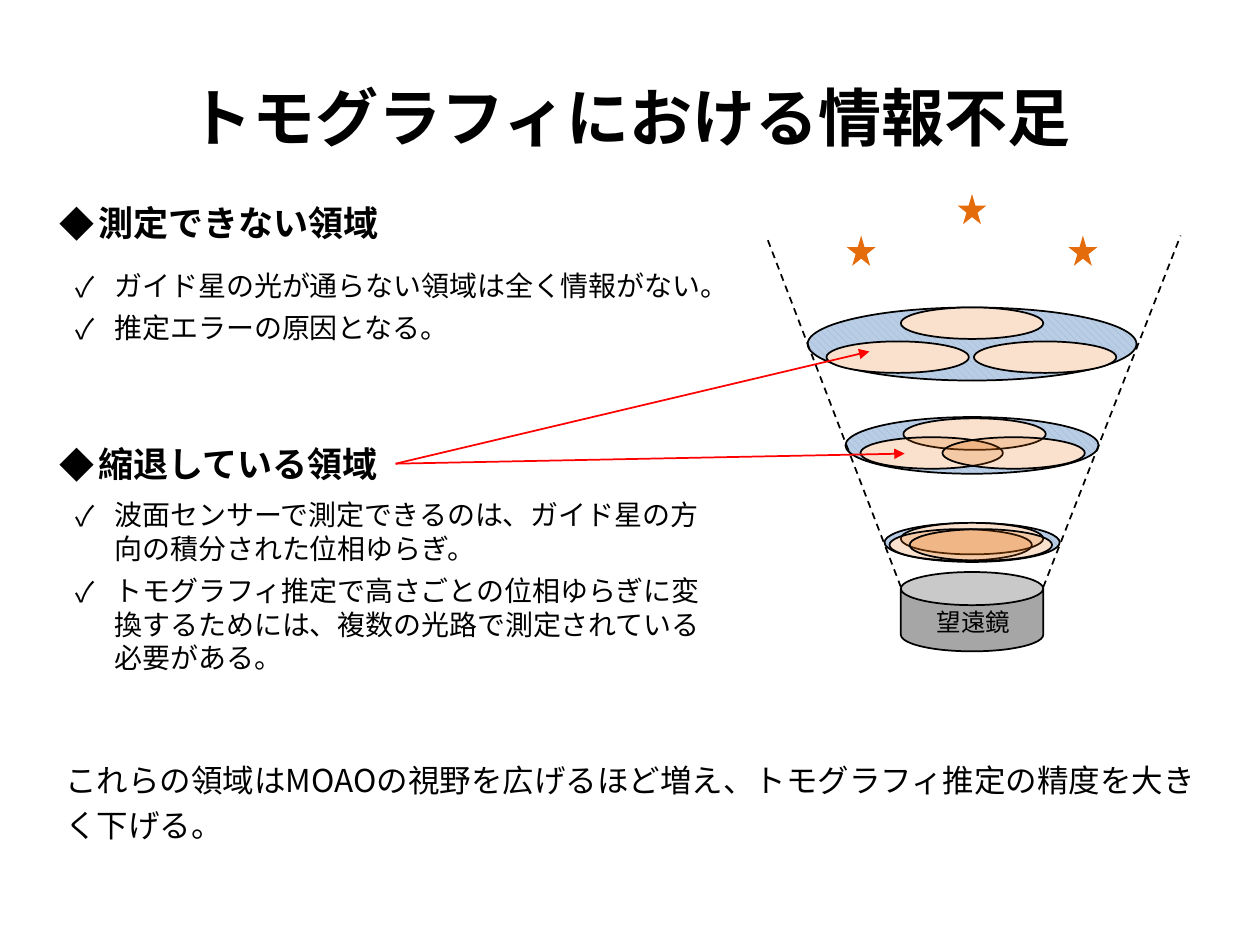
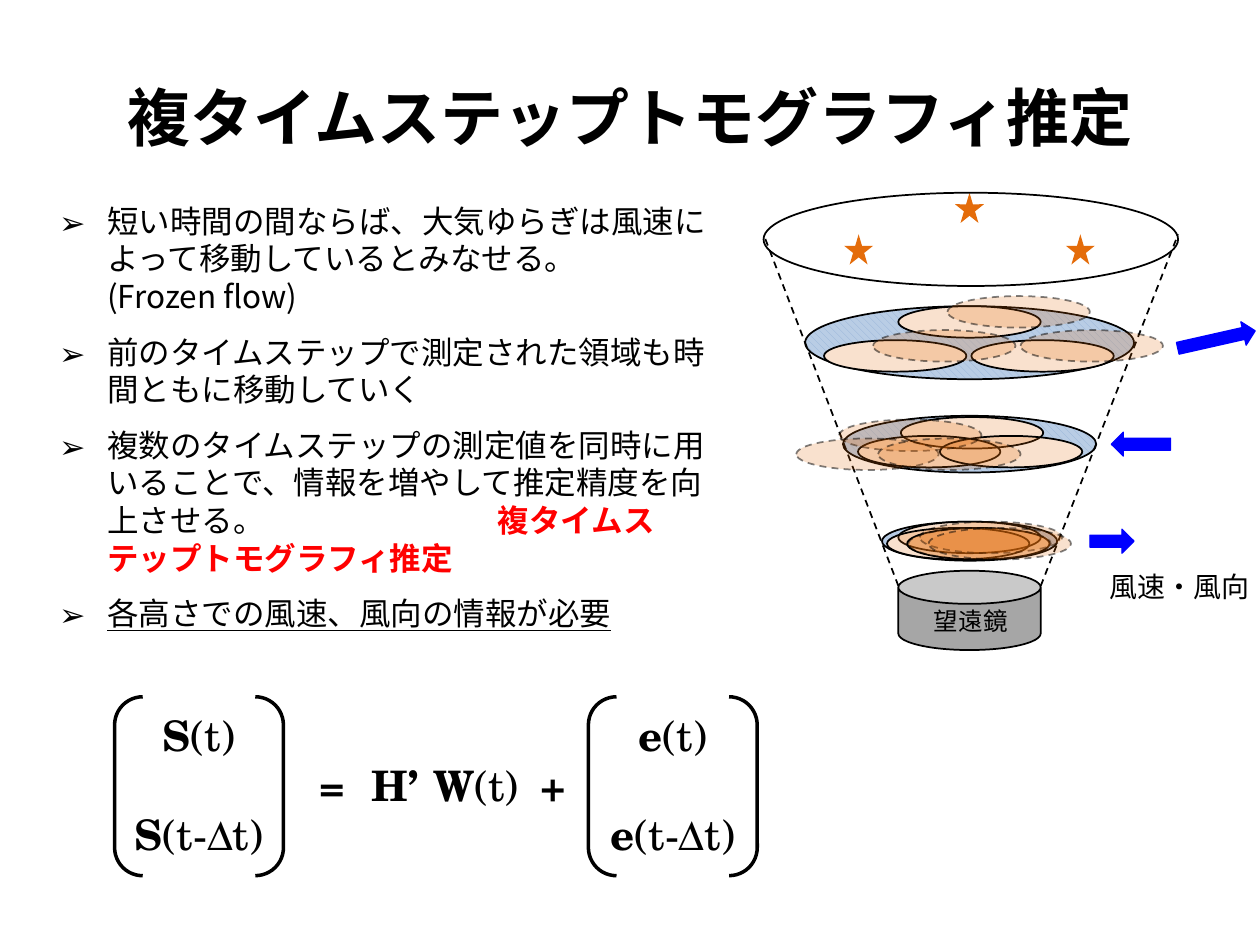
from lxml.etree import SubElement as Sub
from pptx import Presentation
from pptx.dml.color import RGBColor as RGB
from pptx.enum.dml import MSO_LINE as Dash, MSO_PATTERN as Hatch
from pptx.enum.shapes import MSO_CONNECTOR as Link, MSO_SHAPE as Kind
from pptx.enum.text import MSO_ANCHOR as Anchor, MSO_AUTO_SIZE as Fit, PP_ALIGN as Align
from pptx.oxml.ns import qn
from pptx.util import Pt

PX = 9144
BLACK = RGB(0x00, 0x00, 0x00)
WHITE = RGB(0xFF, 0xFF, 0xFF)
RED = RGB(0xFF, 0x00, 0x00)
BLUE = RGB(0x00, 0x00, 0xFF)
ORANGE = RGB(0xE4, 0x6C, 0x0A)
GRAY = RGB(0xA6, 0xA6, 0xA6)
SKY = RGB(0x95, 0xB3, 0xD7)
PALE = RGB(0xB9, 0xCD, 0xE5)
SANS, LATIN, SERIF = "Noto Sans CJK JP", "Calibri", "TeX Gyre Schola"

PATCH = (113, 25)
# Each layer: box, corners of its light patches, drift by the wind, arrow box, arrow angle
LAYERS = [
    ((94, 261, 139, 31), [(107, 261), (98, 266), (114, 266)], (17, 0), (259, 267, 35, 19), 0),
    ((63, 177, 201, 45), [(109, 178), (75, 193), (140, 193)], (-49, 2), (276, 190, 47, 19), 180),
    ((33, 90, 261, 58), [(48, 117), (165, 117), (107, 90)], (39, -8), (328, 107, 63, 19), 347.3),
]
STARS = [(152, 0), (64, 33), (240, 33)]


def emu(*sizes):
    """Turn px lengths into EMU."""
    return [size * PX for size in sizes]


def shift(box, x, y):
    """Move a box or point by x and y."""
    return (box[0] + x, box[1] + y, *box[2:])


def write(frame, paras, size=16, font=SANS, color=BLACK, bold=False, align=Align.LEFT,
          anchor=Anchor.TOP, wrap=True, mark=None, indent=0, before=0, lines=1.0, tab=None):
    """Fill a text frame; a paragraph is a string or a list of (text, changes)."""
    frame.auto_size, frame.word_wrap, frame.vertical_anchor = Fit.NONE, wrap, anchor
    for i, runs in enumerate(paras):
        para = frame.add_paragraph() if i else frame.paragraphs[0]
        para.alignment, para.line_spacing = align, lines
        para.space_before = Pt(before)
        props = para._p.get_or_add_pPr()
        props.set("marL", str(indent * PX))
        props.set("indent", str(-indent * PX))
        if mark:
            Sub(props, qn("a:buFont"), typeface=SANS)
            Sub(props, qn("a:buChar"), char=mark)
        if tab:
            tabs = Sub(props, qn("a:tabLst"))
            Sub(tabs, qn("a:tab"), pos=str(tab * PX), algn="l")
        for text, look in [(runs, {})] if isinstance(runs, str) else runs:
            run = para.add_run()
            run.text = text
            style = run.font
            style.name, style.size = font, Pt(size)
            style.bold = look.get("bold", bold)
            style.underline = look.get("under", False)
            style.color.rgb = look.get("color", color)
            east = Sub(run._r.rPr, qn("a:ea"), typeface=font)
            run._r.rPr.find(qn("a:latin")).addnext(east)


def label(slide, box, paras, **look):
    """Add a text box."""
    part = slide.shapes.add_textbox(*emu(*box))
    write(part.text_frame, paras, **look)


def place(part, box, paras, **look):
    """Move a placeholder to a box and fill it."""
    part.left, part.top, part.width, part.height = emu(*box)
    write(part.text_frame, paras, **look)
    return part


def head(slide, text):
    """Set the slide title."""
    place(slide.shapes.title, (50, 30, 900, 125), [text], size=36, bold=True,
          align=Align.CENTER, anchor=Anchor.MIDDLE)


def fade(fill, share):
    """Make a solid fill element partly clear."""
    Sub(fill.find(qn("a:srgbClr")), qn("a:alpha"), val=str(share * 1000))


def draw(slide, kind, box, fill=None, line=None, width=1, clear=None, dash=False):
    """Add a preset shape without shadow."""
    part = slide.shapes.add_shape(kind, *emu(*box))
    part.shadow.inherit = False
    props = part._element.spPr
    if fill is None:
        part.fill.background()
    else:
        part.fill.solid()
        part.fill.fore_color.rgb = fill
        if clear:
            fade(props.find(qn("a:solidFill")), clear)
    if line is None:
        part.line.fill.background()
    else:
        part.line.color.rgb = line
        part.line.width = Pt(width)
        if dash:
            part.line.dash_style = Dash.DASH
            fade(props.find(qn("a:ln")).find(qn("a:solidFill")), 50)
    return part


def join(slide, start, end, color=BLACK, dash=False, arrow=False):
    """Add a straight line between two points."""
    wire = slide.shapes.add_connector(Link.STRAIGHT, *emu(*start, *end))
    wire.line.color.rgb, wire.line.width = color, Pt(1)
    if dash:
        wire.line.dash_style = Dash.DASH
    if arrow:
        Sub(wire.line._get_or_add_ln(), qn("a:tailEnd"), type="triangle", w="med", len="med")
    Sub(wire._element.spPr, qn("a:effectLst"))
    return wire


def cone(slide, x, y):
    """Draw the light cone with its layers, stars and telescope."""
    for box, *_ in LAYERS:
        disc = draw(slide, Kind.OVAL, shift(box, x, y), WHITE, BLACK)
        disc.fill.patterned()
        disc.fill.pattern = Hatch.WIDE_DOWNWARD_DIAGONAL
        disc.fill.fore_color.rgb, disc.fill.back_color.rgb = SKY, PALE
    for low, high in ((107, 0), (220, 329)):
        join(slide, (x + low, y + 312), (x + high, y + 33), dash=True)
    spots = [shift(spot + PATCH, x, y) for layer in LAYERS for spot in layer[1]]
    for box in spots:
        draw(slide, Kind.OVAL, box, WHITE)
    for box in spots:
        draw(slide, Kind.OVAL, box, ORANGE, BLACK, clear=20)
    for star in STARS:
        draw(slide, Kind.STAR_5_POINT, shift(star + (23, 24), x, y), ORANGE)
    can = draw(slide, Kind.CAN, shift((107, 300, 113, 63), x, y), GRAY, BLACK)
    can.adjustments[0] = 0.418
    label(slide, shift((125, 323, 79, 34), x, y), ["望遠鏡"], size=14, font=LATIN,
          align=Align.CENTER, wrap=False)


def wind(slide, x, y):
    """Add the field of view, the drifted patches and the wind arrows."""
    draw(slide, Kind.OVAL, (x, y, 329, 74), line=BLACK)
    for _, spots, drift, box, angle in LAYERS:
        for spot in spots:
            moved = shift(shift(spot + PATCH, *drift), x, y)
            draw(slide, Kind.OVAL, moved, ORANGE, BLACK, clear=20, dash=True)
        arrow = draw(slide, Kind.RIGHT_ARROW, shift(box, x, y), BLUE, BLUE, width=0.75)
        arrow.rotation = angle
    label(slide, shift((265, 294, 132, 37), x, y), ["風速・風向"], wrap=False)


def topic(title, body, x, y, gap, height, name, items):
    """Fill a heading and its list of ticks; return the heading."""
    place(body, (x + 13, y + gap, 528, height), items, mark="✓", indent=31, before=5)
    return place(title, (x, y, 277, 44), [name], size=20, bold=True, mark="◆", indent=31)


def sums(slide, x, y):
    """Set the matrix equation."""
    look = dict(size=24, font=SERIF, wrap=False)
    plain = {"bold": False}
    for left, sign in ((0, "S"), (376, "e")):
        rows = [[(sign, {}), (time, plain)] for time in ("(t)", "(t-Δt)")]
        box = (x + left, y + 5, 134, 131)
        part = slide.shapes.add_textbox(*emu(*box))
        write(part.text_frame, rows, bold=True, align=Align.CENTER, **look)
        part.text_frame.paragraphs[1].space_before = Pt(28)
        draw(slide, Kind.DOUBLE_BRACKET, (x + left, y, 134, 142), line=BLACK, width=2)
    terms = [(153, 41, "="), (194, 58, "H’"), (243, 90, [("W", {}), ("(t)", plain)]), (328, 41, "+")]
    for left, width, term in terms:
        label(slide, (x + left, y + 45, width, 50), [term], bold=True, **look)


def lack(deck):
    """Build the slide on missing information."""
    slide = deck.slides.add_slide(deck.slide_layouts[4])
    cone(slide, 608, 154)
    head(slide, "トモグラフィにおける情報不足")
    _, name1, list1, name2, list2 = slide.placeholders
    topic(name1, list1, 37, 155, 53, 71, "測定できない領域", [
        "ガイド星の光が通らない領域は全く情報がない。",
        "推定エラーの原因となる。"])
    title = topic(name2, list2, 37, 346, 44, 152, "縮退している領域", [
        "波面センサーで測定できるのは、ガイド星の方向の積分された位相ゆらぎ。",
        "トモグラフィ推定で高さごとの位相ゆらぎに変換するためには、複数の光路で測定されている必要がある。"])
    for end in ((690, 279), (718, 360)):
        join(slide, (314, 368), end, RED, arrow=True).begin_connect(title, 3)
    label(slide, (42, 593, 932, 82),
          ["これらの領域はMOAOの視野を広げるほど増え、トモグラフィ推定の精度を大きく下げる。"],
          size=18, before=5, lines=1.2)


def steps(deck):
    """Build the slide on several time steps."""
    slide = deck.slides.add_slide(deck.slide_layouts[1])
    head(slide, "複タイムステップトモグラフィ推定")
    place(slide.placeholders[1], (37, 155, 541, 399), [
        "短い時間の間ならば、大気ゆらぎは風速によって移動しているとみなせる。　(Frozen flow)",
        "前のタイムステップで測定された領域も時間ともに移動していく",
        [("複数のタイムステップの測定値を同時に用いることで、情報を増やして推定精度を向上させる。\t", {}),
         ("複タイムステップトモグラフィ推定", {"color": RED, "bold": True})],
        [("各高さでの風速、風向の情報が必要", {"under": True})],
    ], size=18, mark="➢", indent=38, before=10, tab=348)
    cone(slide, 606, 153)
    wind(slide, 606, 153)
    sums(slide, 91, 553)


def main():
    """Build and save the deck."""
    deck = Presentation()
    deck.slide_width, deck.slide_height = emu(1000, 750)
    lack(deck)
    steps(deck)
    deck.save("out.pptx")


if __name__ == "__main__":
    main()
